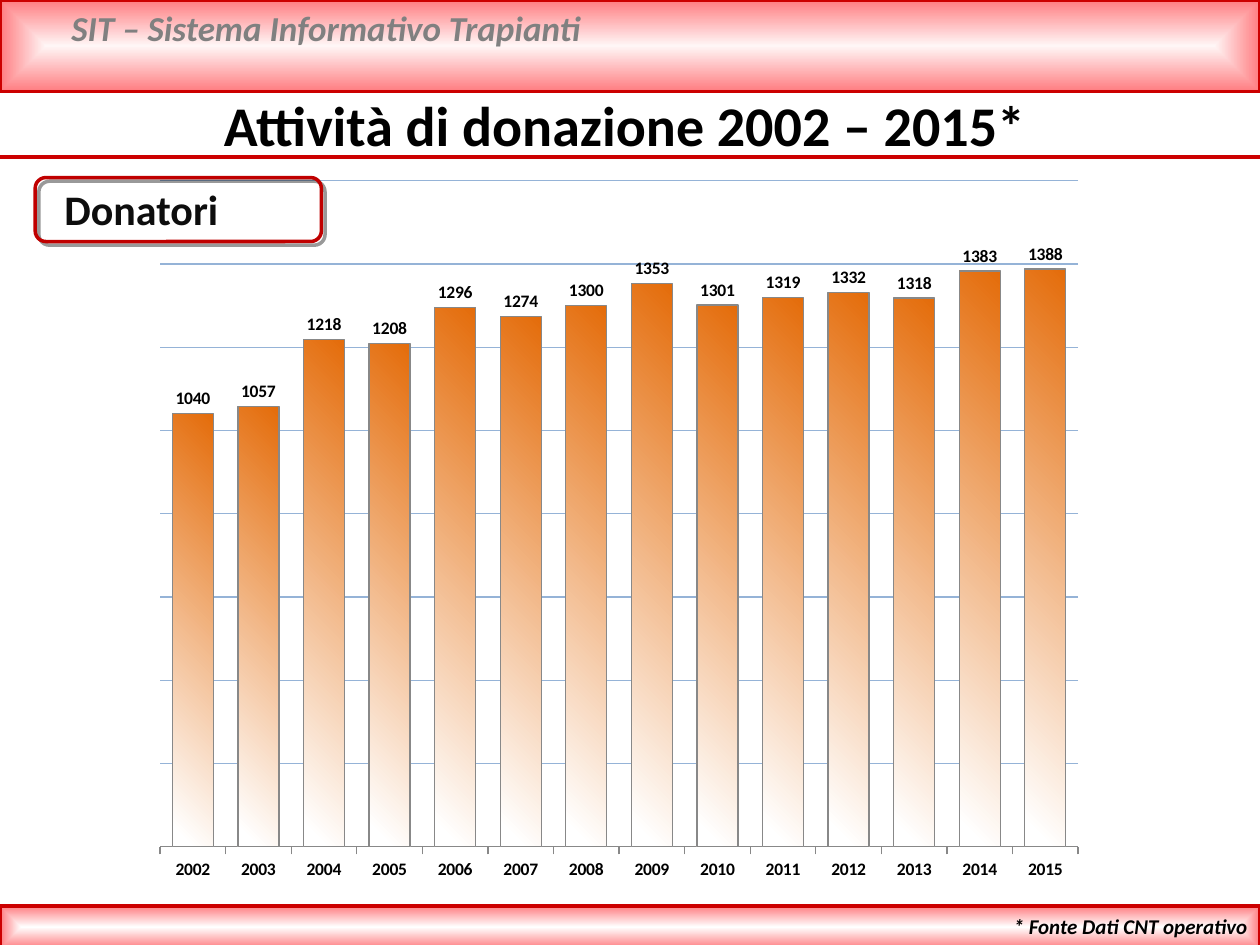
from dataclasses import dataclass

from lxml import etree
from pptx import Presentation
from pptx import util as u
from pptx.chart import data as cd
from pptx.dml import color as col
from pptx.enum import chart as ch
from pptx.enum import shapes, text
from pptx.oxml import parse_xml
from pptx.oxml import ns

FIRST = 2002
DONORS = (1040, 1057, 1218, 1208, 1296, 1274, 1300,
          1353, 1301, 1319, 1332, 1318, 1383, 1388)


@dataclass(frozen=True)
class Theme:
    font: str = "Calibri"
    red: str = "CC0000"
    frame: str = "C00000"
    pink: str = "FF7C80"
    pale: str = "FFF6F6"
    white: str = "FFFFFF"
    black: str = "000000"
    ink: str = "0D0D0D"
    gray: str = "808080"
    axis: str = "888888"
    grid: str = "95B3D7"
    bar: str = "E46C0A"
    title: int = 32
    label: int = 24
    head: int = 20
    note: int = 12
    chart: int = 10
    rule: float = 2
    thin: float = 0.75


class Page:
    def __init__(self, slide, theme):
        self.slide, self.theme = slide, theme

    def stroke(self, line, tint, width):
        line.color.rgb = col.RGBColor.from_string(tint)
        line.width = u.Pt(width)

    def blend(self, fill, start, end, stop=1):
        fill.gradient()
        for point, tint, place in zip(fill.gradient_stops, (start, end), (0, stop)):
            point.color.rgb = col.RGBColor.from_string(tint)
            point.position = place

    def style(self, font, size, tint, bold=True, italic=False):
        font.name, font.size = self.theme.font, u.Pt(size)
        font.bold, font.italic = bold, italic
        font.color.rgb = col.RGBColor.from_string(tint)

    def band(self, top, tall, core):
        box = self.slide.shapes.add_shape(
            shapes.MSO_SHAPE.RECTANGLE, 0, u.Cm(top), u.Cm(25.4), u.Cm(tall))
        box.shadow.inherit = False
        self.blend(box.fill, core, self.theme.pink)
        self.stroke(box.line, self.theme.red, self.theme.rule)
        lin = next(box.element.iter(ns.qn("a:lin")))
        lin.getparent().replace(lin, parse_xml(
            f'<a:path {ns.nsdecls("a")} path="shape">'
            '<a:fillToRect l="50000" t="50000" r="50000" b="50000"/></a:path>'))

    def rule(self, top):
        line = self.slide.shapes.add_connector(
            shapes.MSO_CONNECTOR.STRAIGHT, 0, u.Cm(top), u.Cm(25.4), u.Cm(top))
        self.stroke(line.line, self.theme.red, self.theme.rule)
        etree.SubElement(line.element.spPr, ns.qn("a:effectLst"))

    def frame(self, left, top, wide, tall):
        box = self.slide.shapes.add_shape(
            shapes.MSO_SHAPE.ROUNDED_RECTANGLE, *map(u.Cm, (left, top, wide, tall)))
        box.fill.background()
        self.stroke(box.line, self.theme.frame, self.theme.rule)
        box.shadow.inherit = False
        effect = box.element.spPr.find(ns.qn("a:effectLst"))
        effect.append(parse_xml(
            f'<a:outerShdw {ns.nsdecls("a")} dist="38100" dir="2700000" algn="tl" '
            f'rotWithShape="0"><a:srgbClr val="{self.theme.black}">'
            '<a:alpha val="40000"/></a:srgbClr></a:outerShdw>'))

    def words(self, copy, place, size, tint, align="LEFT", inset=0.25,
              italic=False, wrap=True):
        box = self.slide.shapes.add_textbox(*map(u.Cm, place))
        frame = box.text_frame
        frame.word_wrap = wrap
        frame.margin_left = u.Cm(inset)
        frame.text = copy
        para = frame.paragraphs[0]
        para.alignment = getattr(text.PP_ALIGN, align)
        self.style(para.runs[0].font, size, tint, italic=italic)

    def bars(self, name, cats, vals, place):
        look = self.theme
        data = cd.CategoryChartData()
        data.categories = cats
        data.add_series(name, vals)
        chart = self.slide.shapes.add_chart(
            ch.XL_CHART_TYPE.COLUMN_CLUSTERED, *map(u.Cm, place), data).chart
        chart.has_legend = chart.has_title = False
        self.style(chart.font, look.chart, look.black)

        axis = chart.category_axis
        axis.major_tick_mark = ch.XL_TICK_MARK.OUTSIDE
        self.stroke(axis.format.line, look.axis, look.thin)
        self.style(axis.tick_labels.font, look.chart, look.black)
        scale = chart.value_axis
        scale.minimum_scale, scale.maximum_scale, scale.major_unit = 0, 1600, 200
        scale.has_major_gridlines = True
        self.stroke(scale.major_gridlines.format.line, look.grid, look.thin)
        scale.visible = False

        plot = chart.plots[0]
        plot.gap_width, plot.overlap, plot.vary_by_categories = 60, -20, False
        plot.has_data_labels = True
        tags = plot.data_labels
        tags.show_value = True
        tags.position = ch.XL_LABEL_POSITION.OUTSIDE_END
        self.style(tags.font, look.chart, look.black)
        row = plot.series[0]
        row.invert_if_negative = False
        self.blend(row.format.fill, look.bar, look.white, 0.96)
        row.format.fill.gradient_angle = 225
        self.stroke(row.format.line, look.axis, look.thin)
        self.place(chart, x=0.02, y=0.02, w=0.96, h=0.92)

    def place(self, chart, **parts):
        area = next(chart.element.iter(ns.qn("c:plotArea")))
        for old in area.findall(ns.qn("c:layout")):
            area.remove(old)
        modes = '<c:xMode val="edge"/><c:yMode val="edge"/>'
        sizes = "".join(f'<c:{key} val="{val}"/>' for key, val in parts.items())
        area.insert(0, parse_xml(
            f'<c:layout {ns.nsdecls("c")}><c:manualLayout>'
            f'<c:layoutTarget val="inner"/>{modes}{sizes}'
            '</c:manualLayout></c:layout>'))


def main():
    deck = Presentation()
    deck.slide_width, deck.slide_height = u.Cm(25.4), u.Cm(19.05)
    look = Theme()
    page = Page(deck.slides.add_slide(deck.slide_layouts[6]), look)

    page.band(0, 1.85, look.pale)
    page.words("SIT – Sistema Informativo Trapianti", (1.19, 0, 22.8, 1.11),
               look.head, look.gray, italic=True)
    page.band(18.26, 0.86, look.white)
    page.rule(3.17)

    years = [str(FIRST + step) for step in range(len(DONORS))]
    page.bars("Donatori", years, DONORS, (2.84, 3.35, 19.28, 14.6))

    page.words("Attività di donazione 2002 – 2015*", (0, 1.7, 25.2, 1.62),
               look.title, look.black, "CENTER")
    page.words("Donatori", (0.64, 3.58, 5.87, 1.29), look.label, look.ink, inset=0.66)
    page.frame(0.71, 3.58, 5.77, 1.29)
    page.words("* Fonte Dati CNT operativo", (20.09, 18.29, 5.31, 0.76),
               look.note, look.black, "RIGHT", italic=True, wrap=False)

    deck.save("out.pptx")


if __name__ == "__main__":
    main()
